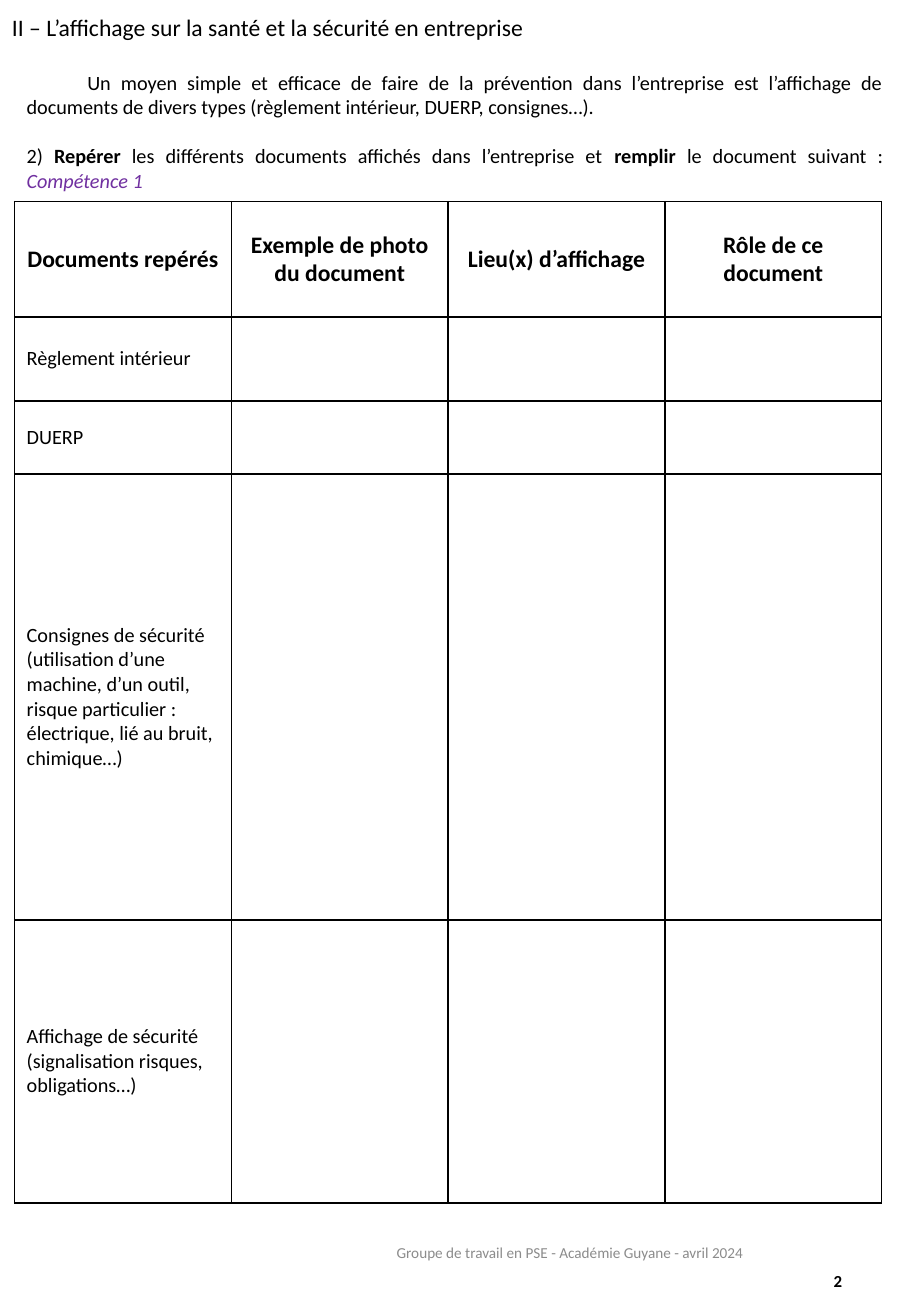
from pptx import Presentation
from pptx.dml.color import RGBColor
from pptx.enum.text import MSO_ANCHOR as Anchor, MSO_AUTO_SIZE as Auto, PP_ALIGN as Align
from pptx.oxml.ns import qn
from pptx.util import Inches, Pt
from lxml.etree import SubElement

BLACK = RGBColor(0x00, 0x00, 0x00)
WHITE = RGBColor(0xFF, 0xFF, 0xFF)
GREY = RGBColor(0x8C, 0x8C, 0x8C)
PURPLE = RGBColor(0x70, 0x30, 0xA0)

HEADS = ["Documents repérés", "Exemple de photo du document",
         "Lieu(x) d’affichage", "Rôle de ce document"]
ROWS = [
    ("Règlement intérieur", 0.69),
    ("DUERP", 0.6),
    ("Consignes de sécurité (utilisation d’une machine, d’un outil, "
     "risque particulier : électrique, lié au bruit, chimique…)", 3.67),
    ("Affichage de sécurité (signalisation risques, obligations…)", 2.33),
]


def style(run, size, color=BLACK, bold=False, italic=False):
    font = run.font
    font.name, font.size = "Calibri", Pt(size)
    font.bold, font.italic = bold, italic
    font.color.rgb = color


def write(para, text, size, align=Align.LEFT, color=BLACK, bold=False):
    para.text = text
    para.alignment = align
    style(para.runs[0], size, color, bold)


def add_box(slide, box, anchor=Anchor.TOP, wrap=True):
    frame = slide.shapes.add_textbox(*map(Inches, box)).text_frame
    frame.word_wrap = wrap
    frame.vertical_anchor = anchor
    return frame


def add_title(slide, box):
    frame = add_box(slide, box, wrap=False)
    frame.auto_size = Auto.SHAPE_TO_FIT_TEXT
    write(frame.paragraphs[0],
          "II – L’affichage sur la santé et la sécurité en entreprise", 14)


def add_intro(slide, box):
    frame = add_box(slide, box)
    frame.auto_size = Auto.SHAPE_TO_FIT_TEXT
    lead = frame.paragraphs[0]
    write(lead, "Un moyen simple et efficace de faire de la prévention dans "
          "l’entreprise est l’affichage de documents de divers types "
          "(règlement intérieur, DUERP, consignes…).", 12, Align.JUSTIFY)
    lead.space_after = Pt(14.6)
    # First-line indent
    lead._p.get_or_add_pPr().set("indent", str(Inches(0.5)))

    # Question with its keywords in bold
    task = frame.add_paragraph()
    task.alignment = Align.JUSTIFY
    parts = [("2) ", False), ("Repérer", True),
             (" les différents documents affichés dans l’entreprise et ", False),
             ("remplir ", True), ("le document suivant : ", False)]
    for text, bold in parts:
        run = task.add_run()
        run.text = text
        style(run, 12, bold=bold)
    skill = task.add_run()
    skill.text = "Compétence 1"
    style(skill, 12, PURPLE, italic=True)


def add_borders(cell):
    props = cell._tc.get_or_add_tcPr()
    for side in ("lnL", "lnR", "lnT", "lnB"):
        line = SubElement(props, qn(f"a:{side}"), w=str(Pt(1)))
        fill = SubElement(line, qn("a:solidFill"))
        SubElement(fill, qn("a:srgbClr"), val=str(BLACK))


def add_grid(slide, box):
    count = len(HEADS)
    shape = slide.shapes.add_table(len(ROWS) + 1, count, *map(Inches, box))
    table = shape.table
    for col in table.columns:
        col.width = Inches(box[2] / count)
    heights = [0.95] + [height for _, height in ROWS]
    for row, height in zip(table.rows, heights):
        row.height = Inches(height)
    # Borders come before the fill in the cell properties
    for cell in table.iter_cells():
        add_borders(cell)
        cell.fill.solid()
        cell.fill.fore_color.rgb = WHITE
        cell.vertical_anchor = Anchor.MIDDLE
    for col, text in enumerate(HEADS):
        para = table.cell(0, col).text_frame.paragraphs[0]
        write(para, text, 14, Align.CENTER, bold=True)
    for row, (text, _) in enumerate(ROWS, 1):
        write(table.cell(row, 0).text_frame.paragraphs[0], text, 12)


def add_footer(slide, box):
    left, top, width, height = box
    note = add_box(slide, (left, top, 3.46, height), Anchor.MIDDLE)
    write(note.paragraphs[0],
          "Groupe de travail en PSE - Académie Guyane - avril 2024",
          9, Align.CENTER, GREY)
    # Page number, at the right end of the footer
    page = add_box(slide, (left + width - 1.69, top + 0.23, 1.69, height),
                   Anchor.MIDDLE)
    write(page.paragraphs[0], "2", 10, Align.RIGHT, bold=True)


def main():
    deck = Presentation()
    deck.slide_width, deck.slide_height = Inches(7.5), Inches(10.83)
    slide = deck.slides.add_slide(deck.slide_layouts[6])
    add_title(slide, (0, 0.06, 4.46, 0.34))
    add_intro(slide, (0.12, 0.53, 7.25, 1.11))
    add_grid(slide, (0.12, 1.66, 7.14, 8.24))
    add_footer(slide, (2.96, 10.02, 4.07, 0.58))
    deck.save("out.pptx")


if __name__ == "__main__":
    main()
